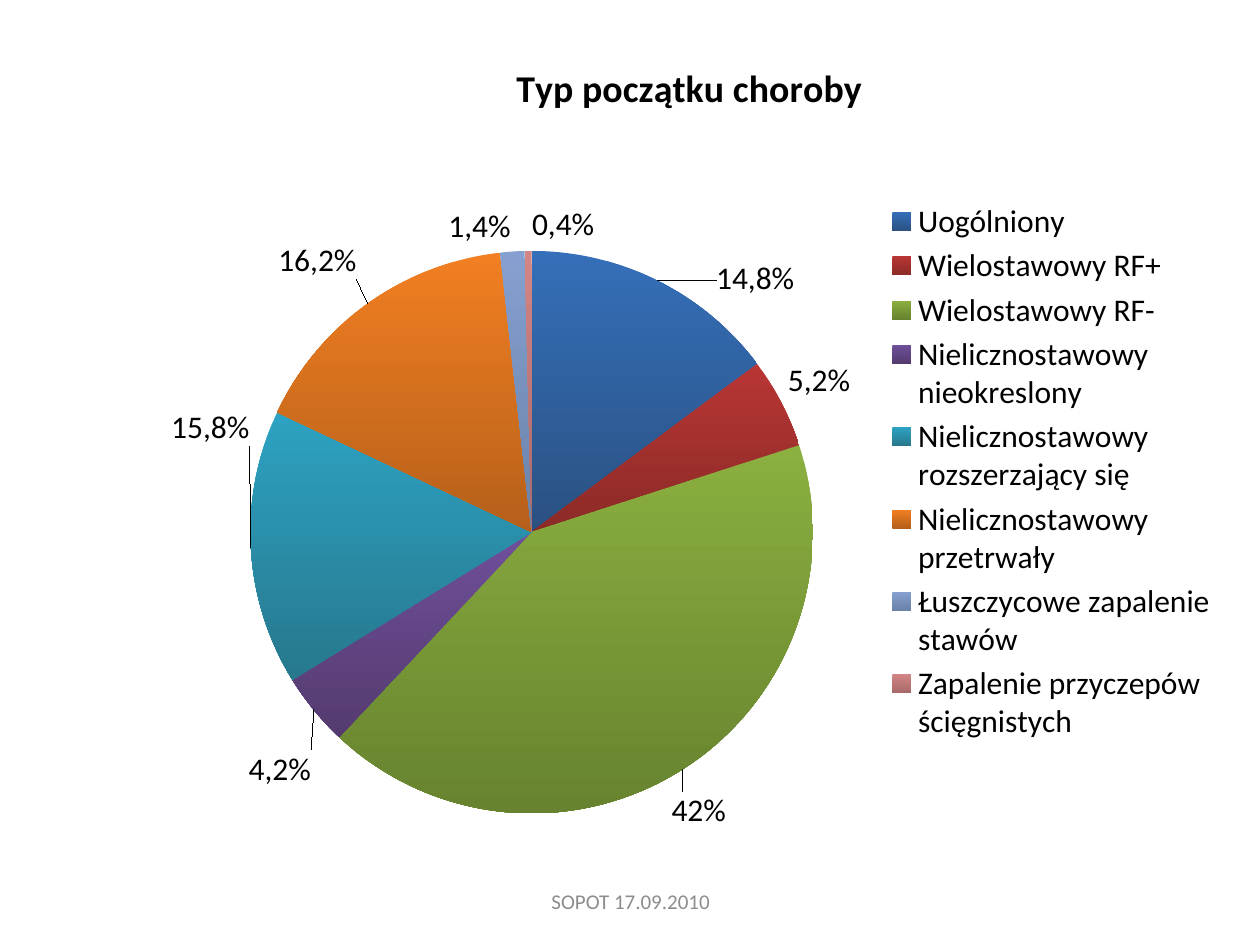
from lxml import etree
from pptx import Presentation
from pptx.chart.data import CategoryChartData
from pptx.dml.color import RGBColor
from pptx.enum.chart import XL_CHART_TYPE, XL_LABEL_POSITION, XL_LEGEND_POSITION
from pptx.enum.text import MSO_ANCHOR, PP_ALIGN
from pptx.oxml.ns import qn
from pptx.util import Cm, Pt

PIE = XL_CHART_TYPE.PIE
LEGEND_RIGHT = XL_LEGEND_POSITION.RIGHT
OUTSIDE = XL_LABEL_POSITION.OUTSIDE_END
CENTER = PP_ALIGN.CENTER
MIDDLE = MSO_ANCHOR.MIDDLE

FONT = "Calibri"
TITLE = "Typ początku choroby"
CHART_WIDTH, CHART_HEIGHT = Cm(21.82), Cm(17.86)
PERCENT_SLICE = 2  # its label is the computed percentage

# Onset type, share, gradient top and bottom, label shift in cm
SLICES = [
    ("Uogólniony", 14.8, "356FB9", "2A5182", (1.11, 0.46)),
    ("Wielostawowy RF+", 5.2, "B83634", "8B2A27", None),
    ("Wielostawowy RF-", 42, "8BAF40", "67832F", (-0.3, 0.32)),
    ("Nielicznostawowy nieokreslony", 4.2, "6F4F9A", "543B6F", (0.06, 0.71)),
    ("Nielicznostawowy rozszerzający się", 15.8, "2DA2C2", "27788D", (0.12, -2.44)),
    ("Nielicznostawowy przetrwały", 16.2, "F27F22", "B5601A", (-0.14, -0.36)),
    ("Łuszczycowe zapalenie stawów", 1.4, "85A0D0", "6A82A8", (-0.65, 0.02)),
    ("Zapalenie przyczepów ścięgnistych", 0.4, "D38585", "A86868", (0.71, 0)),
]


def color(value):
    return RGBColor.from_string(value)


def set_font(font, size, value, bold=False):
    font.name = FONT
    font.size = Pt(size)
    font.bold = bold
    font.color.rgb = color(value)


def manual_layout(modes, **lengths):
    """Build a layout; lengths in cm become fractions of the chart."""
    layout = etree.Element(qn("c:layout"))
    manual = etree.SubElement(layout, qn("c:manualLayout"))
    for name, value in modes.items():
        etree.SubElement(manual, qn(f"c:{name}")).set("val", value)
    for name, value in lengths.items():
        whole = CHART_WIDTH if name in "xw" else CHART_HEIGHT
        etree.SubElement(manual, qn(f"c:{name}")).set(
            "val", str(round(Cm(value) / whole, 4)))
    return layout


def edge_layout(**lengths):
    return manual_layout({"xMode": "edge", "yMode": "edge"}, **lengths)


def place(parent, previous, layout):
    """Put a layout after the named child, replacing any layout there."""
    for old in parent.findall(qn("c:layout")):
        parent.remove(old)
    if previous is None:
        parent.insert(0, layout)
    else:
        parent.find(qn(previous)).addnext(layout)


def fill_slice(point, top, bottom):
    fill = point.format.fill
    fill.gradient()
    fill.gradient_angle = 270
    for stop, value in zip(fill.gradient_stops, (top, bottom)):
        stop.color.rgb = color(value)
    point.format.line.fill.background()


def show_whole_percent(element):
    element.find(qn("c:showVal")).set("val", "0")
    element.find(qn("c:showPercent")).set("val", "1")
    number_format = etree.Element(qn("c:numFmt"), formatCode="0%", sourceLinked="0")
    element.find(qn("c:idx")).addnext(number_format)


def label_slices(series):
    labels = series.data_labels
    labels.show_value = False
    labels.show_percentage = True
    labels.number_format = "0.0%"
    labels.number_format_is_linked = False
    labels.position = OUTSIDE
    set_font(labels.font, 18, "000000")

    for index, (_, share, _, _, shift) in enumerate(SLICES):
        label = series.points[index].data_label
        label.position = OUTSIDE
        if index == PERCENT_SLICE:
            set_font(label.font, 18, "000000")
        else:
            para = label.text_frame.paragraphs[0]
            para.text = f"{share:g}%".replace(".", ",")
            set_font(para.font, 18, "000000")

        element = labels._element.findall(qn("c:dLbl"))[index]
        if index == PERCENT_SLICE:
            show_whole_percent(element)
        if shift:
            place(element, "c:idx", manual_layout({}, x=shift[0], y=shift[1]))


def add_pie(page):
    data = CategoryChartData(number_format="0.0")
    data.categories = [entry[0] for entry in SLICES]
    data.add_series("Series 1", [entry[1] for entry in SLICES])
    chart = page.shapes.add_chart(
        PIE, Cm(2.97), Cm(0.58), CHART_WIDTH, CHART_HEIGHT, data
    ).chart
    set_font(chart.font, 18, "000000")

    # Title
    chart.has_title = True
    para = chart.chart_title.text_frame.paragraphs[0]
    para.text = TITLE
    set_font(para.font, 21.6, "000000", bold=True)
    place(chart.chart_title._element, "c:tx", edge_layout(x=7.3, y=0.51))

    # Legend
    chart.has_legend = True
    legend = chart.legend
    legend.position = LEGEND_RIGHT
    legend.include_in_layout = False
    set_font(legend.font, 18, "000000")
    place(legend._element, "c:legendPos", edge_layout(x=14.84, y=3.38, w=6.76, h=11.1))

    # Slices
    plot = chart.plots[0]
    plot.vary_by_categories = True
    place(plot._element.getparent(), None,
          manual_layout({"layoutTarget": "inner", "xMode": "edge", "yMode": "edge"},
                        x=2.08, y=4.48, w=11.34, h=11.34))
    series = plot.series[0]
    for index, (_, _, top, bottom, _) in enumerate(SLICES):
        fill_slice(series.points[index], top, bottom)
    label_slices(series)


def add_footer(page, text):
    box = page.shapes.add_textbox(Cm(8.69), Cm(17.65), Cm(8.05), Cm(1.02))
    frame = box.text_frame
    frame.word_wrap = True
    frame.vertical_anchor = MIDDLE
    para = frame.paragraphs[0]
    para.text = text
    para.alignment = CENTER
    set_font(para.font, 12, "8C8C8C")


def main():
    deck = Presentation()
    deck.slide_width, deck.slide_height = Cm(25.4), Cm(19.05)
    page = deck.slides.add_slide(deck.slide_layouts[6])
    add_pie(page)
    add_footer(page, "SOPOT 17.09.2010")
    deck.save("out.pptx")


if __name__ == "__main__":
    main()
